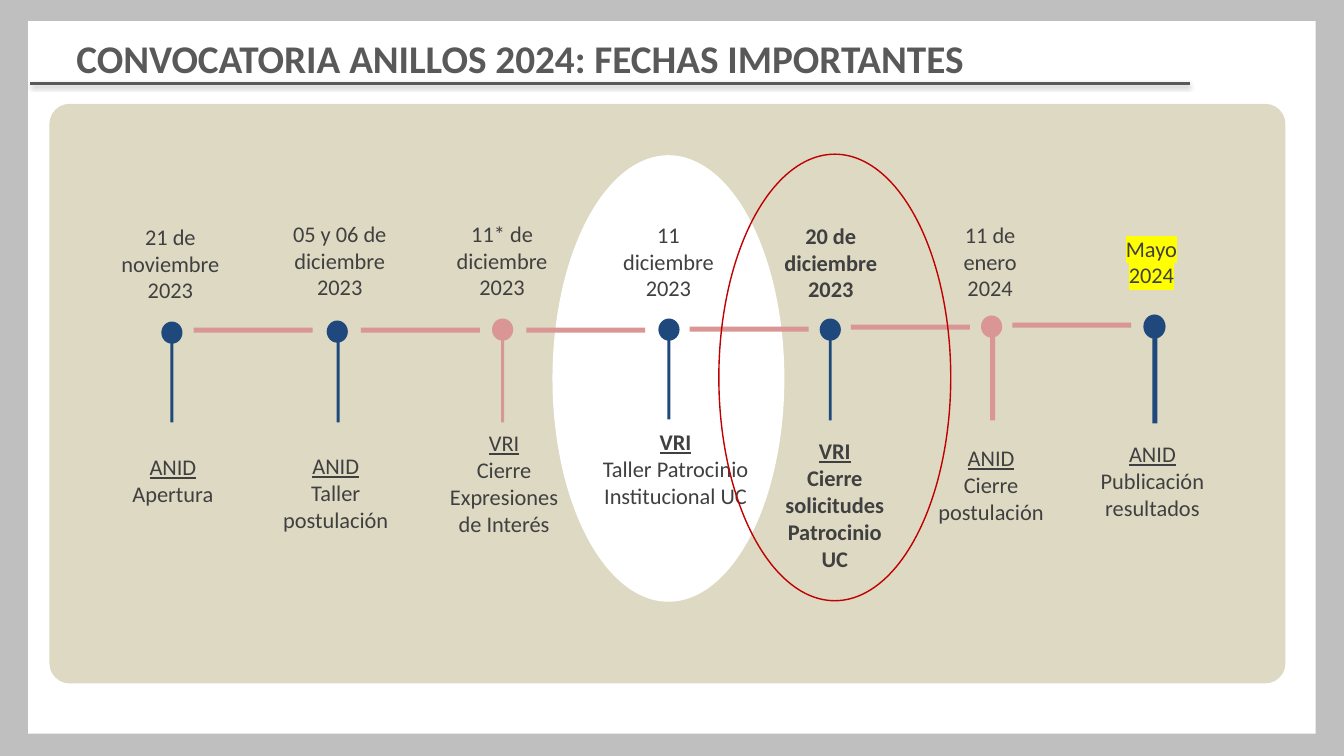
import pptx
import pptx.dml.color
import pptx.enum.shapes
import pptx.enum.text
import pptx.oxml
import pptx.oxml.ns
import pptx.util
from pptx.util import Inches

SHAPE = pptx.enum.shapes.MSO_SHAPE
ANCHOR = pptx.enum.text.MSO_ANCHOR
COLORS = {
    "frame": "BFBFBF", "paper": "FFFFFF", "panel": "DDD9C3",
    "title": "595959", "text": "404040", "highlight": "FFFF00",
    "blue": "1F497D", "pink": "D99694", "red": "C00000",
}
SHADOW = """<a:effectLst %s><a:outerShdw blurRad="39370" dist="20320" dir="5400000">
<a:srgbClr val="000000"><a:alpha val="38000"/></a:srgbClr></a:outerShdw></a:effectLst>"""


class TimelineSlide:
    """Holds the slide and its style."""

    font = "Calibri"

    def __init__(self, slide):
        self.slide = slide

    def color(self, name):
        return pptx.dml.color.RGBColor.from_string(COLORS[name])

    def background(self, name):
        fill = self.slide.background.fill
        fill.solid()
        fill.fore_color.rgb = self.color(name)

    def shape(self, kind, box, fill=None, outline=None, radius=None):
        figure = self.slide.shapes.add_shape(kind, *map(Inches, box))
        figure.shadow.inherit = False
        if fill:
            figure.fill.solid()
            figure.fill.fore_color.rgb = self.color(fill)
        else:
            figure.fill.background()
        if outline:
            figure.line.color.rgb = self.color(outline)
            figure.line.width = pptx.util.Pt(1)
        else:
            figure.line.fill.background()
        if radius:
            figure.adjustments[0] = radius

    def shadowed_rule(self, start, end, y):
        rule = self.slide.shapes.add_connector(
            pptx.enum.shapes.MSO_CONNECTOR.STRAIGHT,
            Inches(start), Inches(y), Inches(end), Inches(y))
        rule.line.color.rgb = self.color("title")
        rule.line.width = pptx.util.Pt(2.25)
        effects = pptx.oxml.parse_xml(SHADOW % pptx.oxml.ns.nsdecls("a"))
        rule._element.spPr.append(effects)

    def text(self, box, lines, size=16, color="text", bold=False, align="CENTER",
             anchor=ANCHOR.TOP, grow=True):
        """Each line is a (text, style) pair; style may hold bold, underline, highlight."""
        frame = self.slide.shapes.add_textbox(*map(Inches, box)).text_frame
        frame.word_wrap = True
        frame.vertical_anchor = anchor
        if grow:
            frame.auto_size = pptx.enum.text.MSO_AUTO_SIZE.SHAPE_TO_FIT_TEXT
        for i, (words, style) in enumerate(lines):
            paragraph = frame.add_paragraph() if i else frame.paragraphs[0]
            paragraph.alignment = getattr(pptx.enum.text.PP_ALIGN, align)
            run = paragraph.add_run()
            run.text = words
            run.font.name = self.font
            run.font.size = pptx.util.Pt(size)
            run.font.bold = style.get("bold", bold)
            run.font.underline = style.get("underline", False)
            run.font.color.rgb = self.color(color)
            if "highlight" in style:
                marker = pptx.oxml.parse_xml(
                    '<a:highlight %s><a:srgbClr val="%s"/></a:highlight>'
                    % (pptx.oxml.ns.nsdecls("a"), COLORS[style["highlight"]]))
                run.font._element.find(pptx.oxml.ns.qn("a:solidFill")).addnext(marker)

    def milestone(self, color, dot, stem, date_box, date, event_box, event, bold=False):
        """Draw a dot, the stem under it, the date above and the event below."""
        self.shape(SHAPE.OVAL, dot, color)
        self.shape(SHAPE.RECTANGLE, stem, color)
        self.text(date_box, date, bold=bold, anchor=ANCHOR.BOTTOM)
        self.text(event_box, event, bold=bold)


PLAIN = {}
OWNER = {"underline": True}
MARKED = {"highlight": "highlight"}

# color, dot, stem, date box, date lines, event box, event lines, bold
MILESTONES = [
    ("blue", (1.6, 3.19, 0.21, 0.22), (1.69, 3.35, 0.03, 0.84),
     (1.04, 2.15, 1.3, 0.91), [("21 de", PLAIN), ("noviembre 2023", PLAIN)],
     (0.91, 4.45, 1.61, 0.64), [("ANID", OWNER), ("Apertura", PLAIN)]),
    ("blue", (3.24, 3.18, 0.21, 0.22), (3.34, 3.35, 0.03, 0.84),
     (2.72, 2.12, 1.3, 0.91), [("05 y 06 de", PLAIN), ("diciembre 2023", PLAIN)],
     (2.56, 4.44, 1.54, 0.91), [("ANID", OWNER), ("Taller postulación", PLAIN)]),
    ("pink", (4.88, 3.16, 0.21, 0.22), (4.97, 3.35, 0.03, 0.84),
     (4.33, 2.12, 1.3, 0.91), [("11* de", PLAIN), ("diciembre 2023", PLAIN)],
     (4.35, 4.21, 1.3, 1.18), [("VRI", OWNER), ("Cierre Expresiones de Interés", PLAIN)]),
    ("blue", (6.53, 3.16, 0.21, 0.22), (6.62, 3.32, 0.03, 0.84),
     (5.98, 2.13, 1.3, 0.91), [("11", PLAIN), ("diciembre 2023", PLAIN)],
     (5.79, 4.2, 1.82, 0.91), [("VRI", {"underline": True, "bold": True}),
                               ("Taller Patrocinio Institucional UC", PLAIN)]),
    ("blue", (8.13, 3.16, 0.21, 0.22), (8.22, 3.33, 0.03, 0.84),
     (7.59, 2.14, 1.3, 0.91), [("20 de", PLAIN), ("diciembre 2023", PLAIN)],
     (7.56, 4.29, 1.44, 1.18), [("VRI", OWNER), ("Cierre solicitudes Patrocinio UC", PLAIN)],
     True),
    ("pink", (9.73, 3.13, 0.21, 0.22), (9.82, 3.25, 0.05, 0.92),
     (9.26, 2.13, 1.12, 0.91), [("11 de enero", PLAIN), ("2024", PLAIN)],
     (9.05, 4.36, 1.56, 0.91), [("ANID", OWNER), ("Cierre postulación", PLAIN)]),
    ("blue", (11.34, 3.12, 0.22, 0.24), (11.43, 3.24, 0.05, 0.96),
     (10.84, 2.27, 1.16, 0.64), [("Mayo 2024", MARKED)],
     (10.65, 4.32, 1.56, 1.18), [("ANID", OWNER), ("Publicación resultados", PLAIN)]),
]
LINKS = [(1.92, 3.25), (3.58, 3.25), (5.22, 3.25), (6.84, 3.24), (8.44, 3.22), (10.04, 3.2)]


def main():
    deck = pptx.Presentation()
    deck.slide_width, deck.slide_height = Inches(13.33), Inches(7.5)
    timeline = TimelineSlide(deck.slides.add_slide(deck.slide_layouts[6]))

    timeline.background("frame")
    timeline.shape(SHAPE.RECTANGLE, (0.28, 0.21, 12.77, 7.07), "paper")
    timeline.shape(SHAPE.ROUNDED_RECTANGLE, (0.49, 1.03, 12.26, 5.75), "panel", radius=0.035)
    timeline.shadowed_rule(0.3, 11.8, 0.83)
    timeline.text((0.66, 0.29, 10.38, 0.69),
                  [("CONVOCATORIA ANILLOS 2024: FECHAS IMPORTANTES", PLAIN)],
                  size=28, color="title", bold=True, align="LEFT", grow=False)

    timeline.shape(SHAPE.OVAL, (5.48, 1.54, 2.3, 4.43), "paper")
    for left, top in LINKS:
        timeline.shape(SHAPE.RECTANGLE, (left, top, 1.18, 0.05), "pink")
    for milestone in MILESTONES:
        timeline.milestone(*milestone)
    timeline.shape(SHAPE.OVAL, (7.13, 1.53, 2.3, 4.43), outline="red")

    deck.save("out.pptx")


if __name__ == "__main__":
    main()
